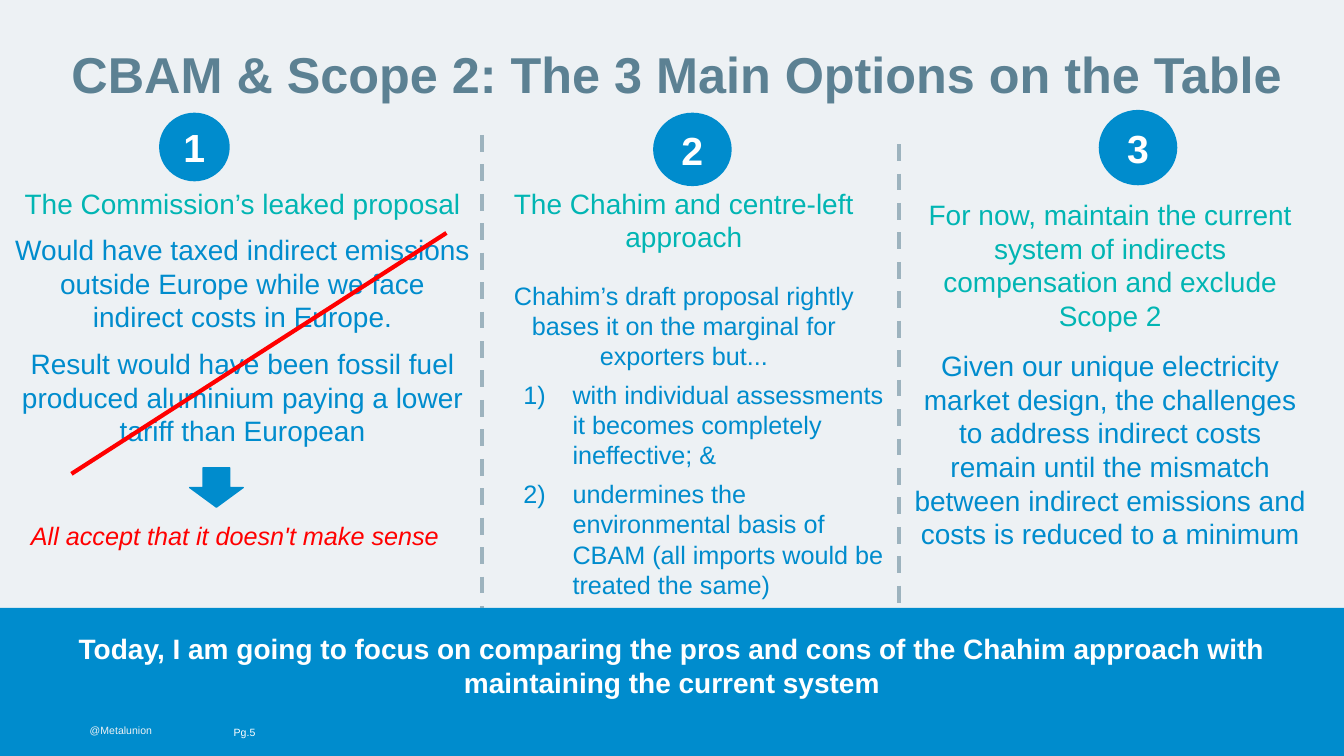
from dataclasses import dataclass
from lxml import etree
from pptx import Presentation
from pptx.dml.color import RGBColor as RGB
from pptx.enum.dml import MSO_LINE as Dash
from pptx.enum.shapes import MSO_CONNECTOR as Link, MSO_SHAPE as Kind
from pptx.enum.text import MSO_ANCHOR as Anchor, MSO_AUTO_SIZE as Fit, PP_ALIGN as Align
from pptx.oxml.ns import qn
from pptx.util import Cm, Pt


@dataclass(frozen=True)
class Theme:
    font: str = "Arial"
    back: str = "EDF1F4"
    blue: str = "008CCD"
    teal: str = "01B5B3"
    slate: str = "5C8193"
    rule: str = "9DB3BE"
    red: str = "FF0000"
    white: str = "FFFFFF"
    title: float = 36
    badge: float = 28
    body: float = 20
    small: float = 18
    foot: float = 7.5
    line: float = 3


@dataclass(frozen=True)
class Para:
    text: str
    color: str
    size: float
    after: float = 0
    listed: bool = False


T = Theme()
WIDE, HIGH = 33.87, 19.05


def style(para, size, color, bold=False, italic=False):
    for run in para.runs:
        font = run.font
        font.name, font.size = T.font, Pt(size)
        font.bold, font.italic = bold, italic
        font.color.rgb = RGB.from_string(color)


def number(para):
    props = para._p.get_or_add_pPr()
    props.set("marL", str(Cm(2.24)))
    props.set("indent", str(Cm(-1.24)))
    etree.SubElement(props, qn("a:buFont"), typeface="+mj-lt")
    etree.SubElement(props, qn("a:buAutoNum"), type="arabicParenR")


def label(slide, box, text, size, color, inset=True, anchor=Anchor.TOP, italic=False):
    frame = slide.shapes.add_textbox(*map(Cm, box)).text_frame
    frame.word_wrap = True
    frame.vertical_anchor = anchor
    if not inset:
        frame.margin_left = frame.margin_right = 0
        frame.margin_top = frame.margin_bottom = 0
    frame.text = text
    style(frame.paragraphs[0], size, color, italic=italic)


def block(slide, kind, box, text="", size=T.body):
    shape = slide.shapes.add_shape(kind, *map(Cm, box))
    shape.shadow.inherit = False
    shape.fill.solid()
    shape.fill.fore_color.rgb = RGB.from_string(T.blue)
    shape.line.fill.background()
    if text:
        frame = shape.text_frame
        frame.vertical_anchor = Anchor.MIDDLE
        frame.text = text
        para = frame.paragraphs[0]
        para.alignment = Align.CENTER
        style(para, size, T.white, bold=True)
    return shape


def stroke(slide, start, end, color, dash=None):
    line = slide.shapes.add_connector(Link.STRAIGHT, *map(Cm, start + end))
    line.line.color.rgb = RGB.from_string(color)
    line.line.width = Pt(T.line)
    if dash:
        line.line.dash_style = dash
    etree.SubElement(line._element.spPr, qn("a:effectLst"))


def footer(slide, box):
    x, y, w, h = box
    block(slide, Kind.RECTANGLE, box)
    label(slide, (x + 2.26, y + 0.28, 3.1, 0.33), "@Metalunion", T.foot, T.back, inset=False)
    label(slide, (x + 5.89, y + 0.12, 1.4, 0.76), "Pg.5", T.foot, T.white,
          inset=False, anchor=Anchor.MIDDLE)


def heading(slide, box, text):
    title = slide.shapes.title
    title.left, title.top, title.width, title.height = map(Cm, box)
    frame = title.text_frame
    frame.auto_size = Fit.NONE
    frame.word_wrap = True
    frame.vertical_anchor = Anchor.TOP
    frame.margin_left = frame.margin_top = frame.margin_bottom = 0
    frame.margin_right = Cm(0.25)
    frame.text = text
    para = frame.paragraphs[0]
    para.alignment = Align.LEFT
    para.line_spacing = 0.9
    para.space_before = Pt(0)
    style(para, T.title, T.slate, bold=True)


def column(slide, box, digit, badge, paras):
    x, y, w, h = box
    dx, dy, bw, bh = badge
    block(slide, Kind.OVAL, (x + dx, y + dy, bw, bh), digit, T.badge)
    frame = slide.shapes.add_textbox(*map(Cm, box)).text_frame
    frame.word_wrap = True
    frame.text = "\n".join(item.text for item in paras)
    for para, item in zip(frame.paragraphs, paras):
        para.alignment = Align.LEFT if item.listed else Align.CENTER
        para.space_after = Pt(item.after)
        if item.listed:
            number(para)
        style(para, item.size, item.color)


def verdict(slide, box):
    x, y, w, h = box
    stroke(slide, (x + 1.27, y + 6.07), (x + 10.72, y), T.red)
    label(slide, (x, y + 7.11, w, h - 7.11), "All accept that it doesn't make sense",
          T.small, T.red, italic=True)
    arrow = block(slide, Kind.DOWN_ARROW, (x + 4.25, y + 5.92, 1.35, 0.99))
    arrow.line.color.rgb = RGB.from_string(T.blue)
    arrow.line.width = Pt(1)


def main():
    deck = Presentation()
    deck.slide_width, deck.slide_height = Cm(WIDE), Cm(HIGH)
    slide = deck.slides.add_slide(deck.slide_layouts[5])
    slide.background.fill.solid()
    slide.background.fill.fore_color.rgb = RGB.from_string(T.back)

    footer(slide, (0, 17.96, WIDE, 1.09))
    heading(slide, (1.8, 1.27, 30.89, 2.03), "CBAM & Scope 2: The 3 Main Options on the Table")
    column(slide, (0.08, 4.57, 12.07, 6.93), "1", (3.93, -1.73, 1.78, 1.73), [
        Para("The Commission’s leaked proposal", T.teal, T.body, 9.2),
        Para("Would have taxed indirect emissions outside Europe while we face "
             "indirect costs in Europe.", T.blue, T.body, 9.2),
        Para("Result would have been fossil fuel produced aluminium paying a lower "
             "tariff than European", T.blue, T.body),
    ])
    column(slide, (11.94, 4.57, 10.59, 10.77), "2", (4.52, -1.73, 1.98, 1.85), [
        Para("The Chahim and centre-left approach", T.teal, T.body, 19),
        Para("Chahim’s draft proposal rightly bases it on the marginal for "
             "exporters but...", T.blue, T.small, 6),
        Para("with individual assessments it becomes completely ineffective; &",
             T.blue, T.small, 6, True),
        Para("undermines the environmental basis of CBAM (all imports would be "
             "treated the same)", T.blue, T.small, 0, True),
    ])
    column(slide, (22.76, 4.85, 10.44, 9.25), "3", (4.93, -2.08, 1.98, 1.9), [
        Para("For now, maintain the current system of indirects compensation and "
             "exclude Scope 2", T.teal, T.body, 12),
        Para("Given our unique electricity market design, the challenges to address "
             "indirect costs remain until the mismatch between indirect emissions and "
             "costs is reduced to a minimum", T.blue, T.body),
    ])
    for x, top, end in ((12.14, 3.4, 15.75), (22.66, 3.63, 15.95)):
        stroke(slide, (x, top), (x, end), T.rule, Dash.DASH)
    block(slide, Kind.RECTANGLE, (0, 15.32, WIDE, 2.9),
          "Today, I am going to focus on comparing the pros and cons of the Chahim "
          "approach with maintaining the current system")
    verdict(slide, (0.53, 5.87, 16.94, 8.13))
    deck.save("out.pptx")


if __name__ == "__main__":
    main()
